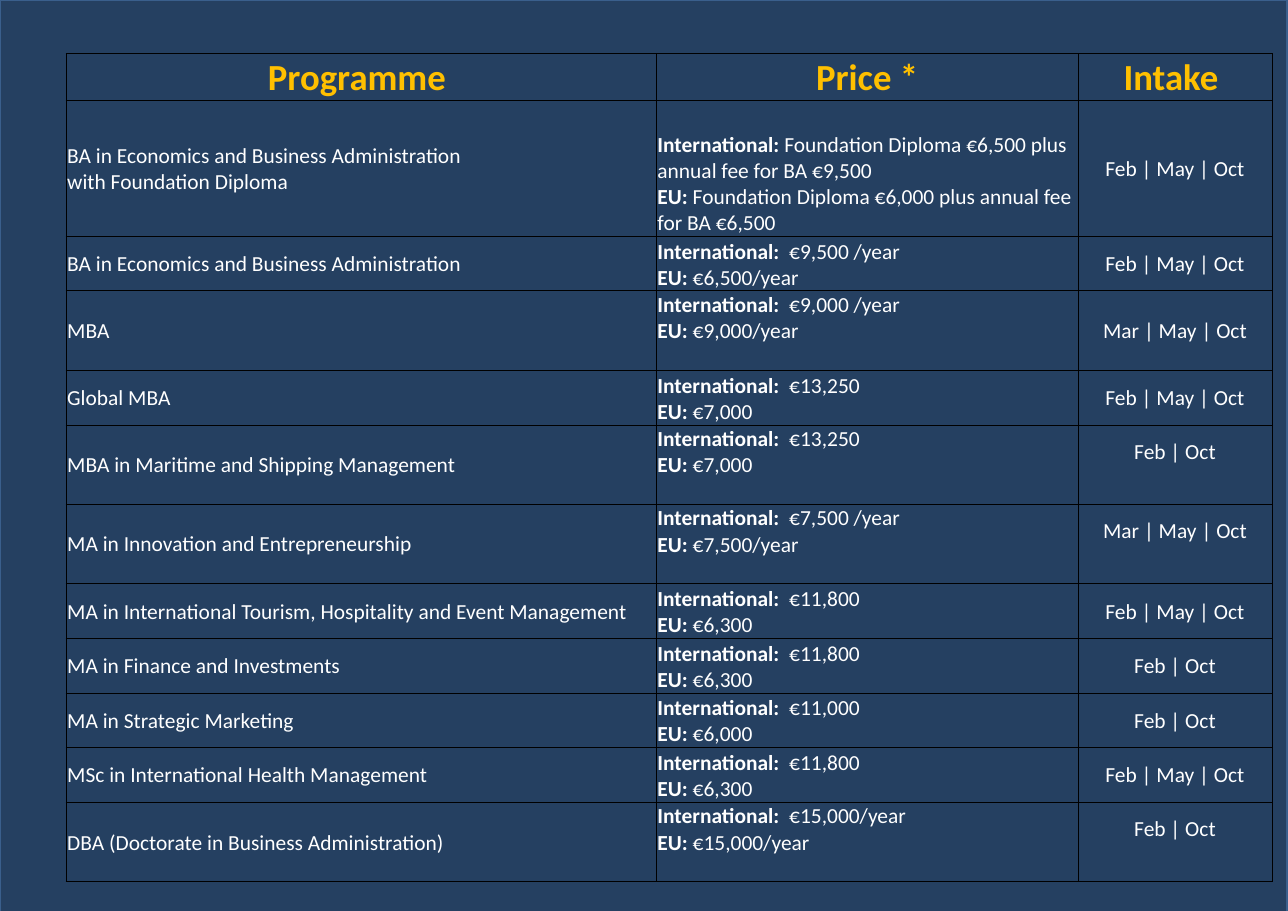
from lxml import etree
from pptx import Presentation, util as u
from pptx.dml.color import RGBColor
from pptx.enum import shapes, text
from pptx.oxml import ns

NAVY, EDGE, GOLD, WHITE, BLACK = "254061", "3A5F8C", "FFC000", "FFFFFF", "000000"
TOP, MIDDLE, BOTTOM = text.MSO_ANCHOR.TOP, text.MSO_ANCHOR.MIDDLE, text.MSO_ANCHOR.BOTTOM
LEFT, CENTER = text.PP_ALIGN.LEFT, text.PP_ALIGN.CENTER

COLUMN_WIDTHS = [13.61, 9.73, 4.47]
HEADER_HEIGHT, LONG, SHORT, TALL = 1.05, 3.14, 1.26, 1.83
RAISED = 0.6  # bottom inset that lifts an intake above the row's middle
HEADERS = ["Programme ", "Price *", "Intake "]

# Programme, international price, EU price, intake, row height, intake's bottom inset
PROGRAMMES = [
    ("BA in Economics and Business Administration\nwith Foundation Diploma",
     " Foundation Diploma €6,500 plus annual fee for BA €9,500 ",
     "Foundation Diploma €6,000 plus annual fee for BA €6,500", "Feb | May | Oct", LONG, 0),
    ("BA in Economics and Business Administration",
     "  €9,500 /year ", "€6,500/year", "Feb | May | Oct", SHORT, 0),
    ("MBA", "  €9,000 /year", "€9,000/year", "Mar | May | Oct", TALL, 0),
    ("Global MBA", "  €13,250", "€7,000", "Feb | May | Oct", SHORT, 0),
    ("MBA in Maritime and Shipping Management",
     "  €13,250", "€7,000", "Feb | Oct", TALL, RAISED),
    ("MA in Innovation and Entrepreneurship",
     "  €7,500 /year", "€7,500/year", "Mar | May | Oct", TALL, RAISED),
    ("MA in International Tourism, Hospitality and Event Management",
     "  €11,800 ", "€6,300", "Feb | May | Oct", SHORT, 0),
    ("MA in Finance and Investments", "  €11,800 ", "€6,300", "Feb | Oct", SHORT, 0),
    ("MA in Strategic Marketing", "  €11,000 ", "€6,000", "Feb | Oct", SHORT, 0),
    ("MSc in International Health Management",
     "  €11,800 ", "€6,300", "Feb | May | Oct", SHORT, 0),
    ("DBA (Doctorate in Business Administration)",
     "  €15,000/year ", "€15,000/year", "Feb | Oct", TALL, RAISED),
]


def color(hex_string):
    return RGBColor.from_string(hex_string)


class PriceSlide:
    font_name = "Calibri"
    inset = u.Cm(0.03)

    def __init__(self, presentation):
        self.slide = presentation.slides.add_slide(presentation.slide_layouts[6])

    def panel(self, left, top, width, height):
        shape = self.slide.shapes.add_shape(
            shapes.MSO_SHAPE.RECTANGLE, u.Cm(left), u.Cm(top), u.Cm(width), u.Cm(height))
        shape.shadow.inherit = False
        shape.fill.solid()
        shape.fill.fore_color.rgb = color(NAVY)
        shape.line.color.rgb = color(EDGE)
        shape.line.width = u.Pt(2)

    def table(self, left, top, widths, heights):
        frame = self.slide.shapes.add_table(
            len(heights), len(widths), u.Cm(left), u.Cm(top),
            u.Cm(sum(widths)), u.Cm(sum(heights)))
        table = frame.table
        table.first_row = table.horz_banding = False
        for column, width in zip(table.columns, widths):
            column.width = u.Cm(width)
        for row, height in zip(table.rows, heights):
            row.height = u.Cm(height)
        return table

    def borders(self, cell):
        properties = cell._tc.get_or_add_tcPr()
        for side in ("lnL", "lnR", "lnT", "lnB"):
            line = etree.SubElement(properties, ns.qn(f"a:{side}"), w=str(u.Pt(0.5)))
            fill = etree.SubElement(line, ns.qn("a:solidFill"))
            etree.SubElement(fill, ns.qn("a:srgbClr"), val=BLACK)

    def cell(self, cell, lines, anchor=MIDDLE, align=LEFT, size=14, hue=WHITE,
             bold=False, bottom=0):
        """Each line is a list of (text, bold) runs or a plain string."""
        self.borders(cell)
        cell.fill.background()
        cell.margin_left = cell.margin_right = cell.margin_top = self.inset
        cell.margin_bottom = u.Cm(bottom)
        cell.vertical_anchor = anchor
        for index, line in enumerate(lines):
            frame = cell.text_frame
            paragraph = frame.add_paragraph() if index else frame.paragraphs[0]
            paragraph.alignment = align
            paragraph.font.name = self.font_name
            paragraph.font.size = u.Pt(size)
            paragraph.font.color.rgb = color(hue)
            for words, strong in [(line, bold)] if isinstance(line, str) else line:
                run = paragraph.add_run()
                run.text = words
                run.font.bold = strong


def main():
    presentation = Presentation()
    presentation.slide_width, presentation.slide_height = u.Cm(29.7), u.Cm(21)
    page = PriceSlide(presentation)

    # Background panel
    page.panel(0, 0, 29.7, 22.63)

    # Price table
    heights = [HEADER_HEIGHT] + [programme[4] for programme in PROGRAMMES]
    table = page.table(1.52, 1.24, COLUMN_WIDTHS, heights)

    # Header row
    for column, header in enumerate(HEADERS):
        page.cell(table.cell(0, column), [header], align=CENTER, size=24, hue=GOLD,
                  bold=True, anchor=BOTTOM if column else MIDDLE)

    # Programme rows
    for row, (name, international, eu, intake, height, lift) in enumerate(PROGRAMMES, 1):
        prices = [[("International:", True), (international, False)],
                  [("EU: ", True), (eu, False)]]
        page.cell(table.cell(row, 0), name.split("\n"))
        page.cell(table.cell(row, 1), prices, anchor=TOP if height == TALL else BOTTOM)
        page.cell(table.cell(row, 2), [intake], align=CENTER, bottom=lift)

    presentation.save("out.pptx")


if __name__ == "__main__":
    main()
